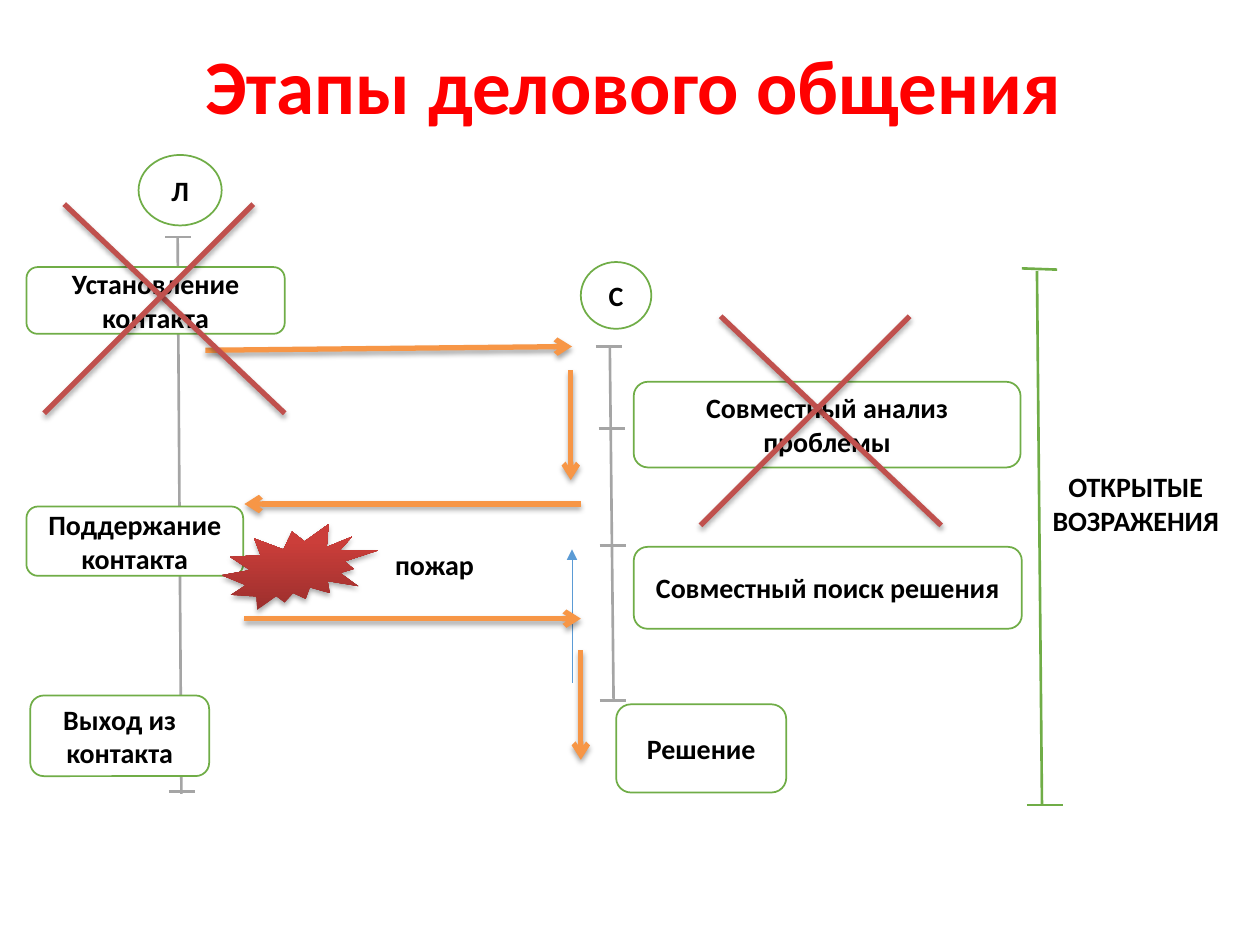
import dataclasses
import typing

import pptx
import pptx.dml.color
import pptx.enum.shapes
import pptx.enum.text
import pptx.oxml.ns
import pptx.util
from lxml import etree

Inches = pptx.util.Inches
Pt = pptx.util.Pt
Kind = pptx.enum.shapes.MSO_SHAPE
Align = pptx.enum.text.PP_ALIGN
qn = pptx.oxml.ns.qn

GREEN, GREY, ORANGE, RED, BLUE = "70AD47", "A5A5A5", "F79646", "C0504D", "5B9BD5"


@dataclasses.dataclass
class Line:
    x1: float
    y1: float
    x2: float
    y2: float
    color: str
    width: float = 1.5
    head: str = ""
    shadow: bool = False


@dataclasses.dataclass
class Stage:
    words: list[str]
    left: float
    top: float
    width: float
    height: float
    outline: str = GREEN
    kind: typing.Any = Kind.ROUNDED_RECTANGLE
    align: typing.Any = Align.CENTER


def rgb(value: str) -> pptx.dml.color.RGBColor:
    return pptx.dml.color.RGBColor.from_string(value)


def cast_shadow(effects) -> None:
    shadow = etree.SubElement(
        effects, qn("a:outerShdw"), blurRad=str(Pt(3.1)), dist=str(Pt(1.8)),
        dir="5400000", rotWithShape="0")
    black = etree.SubElement(shadow, qn("a:srgbClr"), val="000000")
    etree.SubElement(black, qn("a:alpha"), val="35000")


def draw_line(shapes, line: Line) -> None:
    connector = shapes.add_connector(
        pptx.enum.shapes.MSO_CONNECTOR.STRAIGHT,
        Inches(line.x1), Inches(line.y1), Inches(line.x2), Inches(line.y2))
    connector.line.color.rgb = rgb(line.color)
    connector.line.width = Pt(line.width)
    properties = connector._element.spPr
    if line.head:
        etree.SubElement(properties.find(qn("a:ln")), qn("a:tailEnd"), type=line.head)
    effects = etree.SubElement(properties, qn("a:effectLst"))
    if line.shadow:
        cast_shadow(effects)


def write(frame, words: list[str], sizes: list[float], color: str, align) -> None:
    frame.word_wrap = True
    frame.vertical_anchor = pptx.enum.text.MSO_ANCHOR.MIDDLE
    paragraph = frame.paragraphs[0]
    paragraph.alignment = align
    for word, size in zip(words, sizes):
        run = paragraph.add_run()
        run.text = word
        run.font.name = "Calibri"
        run.font.size = Pt(size)
        run.font.bold = True
        run.font.color.rgb = rgb(color)


def draw_stage(shapes, stage: Stage) -> None:
    box = shapes.add_shape(stage.kind, Inches(stage.left), Inches(stage.top),
                           Inches(stage.width), Inches(stage.height))
    box.shadow.inherit = False
    box.fill.solid()
    box.fill.fore_color.rgb = rgb("FFFFFF")
    if stage.outline:
        box.line.color.rgb = rgb(stage.outline)
        box.line.width = Pt(1)
    else:
        box.line.fill.background()
    write(box.text_frame, stage.words, [16, 11, 16], "000000", stage.align)


def draw_fire(shapes) -> None:
    fire = shapes.add_shape(Kind.EXPLOSION2, Inches(1.76), Inches(4.16),
                            Inches(1.24), Inches(0.68))
    fire.line.fill.background()
    fire.fill.gradient()
    fire.fill.gradient_angle = 90
    for stop, position, color in zip(fire.fill.gradient_stops, (0, 0.8), ("9C2F2D", "CB3E3A")):
        stop.position = position
        stop.color.rgb = rgb(color)
    fire.shadow.inherit = False
    cast_shadow(fire._element.spPr.find(qn("a:effectLst")))


def draw_cross(shapes, left: float, top: float) -> None:
    bottom = top + 1.66
    for start, end in ((0.16, 1.91), (1.66, 0)):
        draw_line(shapes, Line(left + start, top, left + end, bottom, RED, 3, shadow=True))


def tick(left: float, y: float) -> Line:
    return Line(left, y, left + 0.21, y, GREY)


def arrow(x1: float, y1: float, x2: float, y2: float) -> Line:
    return Line(x1, y1, x2, y2, ORANGE, 3, "arrow", True)


TIMELINES = [
    Line(1.41, 1.88, 1.44, 6.3, GREY), tick(1.31, 1.88), tick(1.34, 6.28),
    Line(4.84, 2.75, 4.87, 5.55, GREY),
    tick(4.73, 2.75), tick(4.75, 3.4), tick(4.76, 4.33), tick(4.76, 5.56),
    Line(4.54, 5.42, 4.54, 4.36, BLUE, 0.5, "triangle"),
]

STAGES = [
    Stage(["Л"], 1.1, 1.23, 0.66, 0.56, kind=Kind.OVAL),
    Stage(["С"], 4.61, 2.08, 0.56, 0.53, kind=Kind.OVAL),
    Stage(["Установление контакта"], 0.21, 2.12, 2.05, 0.53),
    Stage(["Поддержание контакта"], 0.21, 4.02, 1.72, 0.55),
    Stage(["Выход из контакта"], 0.24, 5.52, 1.42, 0.64),
    Stage(["пожар"], 3.01, 4.2, 0.99, 0.55, outline="", align=Align.LEFT),
    Stage(["Совместный анализ проблемы"], 5.03, 3.03, 3.07, 0.68),
    Stage(["Совместный поиск решения"], 5.03, 4.34, 3.08, 0.65),
    Stage(["Решение"], 4.89, 5.59, 1.35, 0.7),
    Stage(["ОТКРЫТЫЕ", " ", "ВОЗРАЖЕНИЯ"], 8.15, 1.88, 1.73, 4.23, outline=""),
]

OBJECTIONS_SPAN = [
    Line(8.23, 2.15, 8.27, 6.39, GREEN),
    Line(8.11, 2.13, 8.39, 2.14, GREEN),
    Line(8.15, 6.39, 8.44, 6.39, GREEN),
]

EXCHANGES = [
    arrow(1.63, 2.78, 4.54, 2.75),
    arrow(4.61, 4, 1.94, 4),
    arrow(1.94, 4.91, 4.61, 4.91),
    arrow(4.53, 2.94, 4.53, 3.81),
    arrow(4.61, 5.16, 4.61, 6.03),
]


def main() -> None:
    deck = pptx.Presentation()
    deck.slide_width, deck.slide_height = Inches(10), Inches(7.5)
    shapes = deck.slides.add_slide(deck.slide_layouts[6]).shapes

    title = shapes.add_textbox(Inches(0.53), Inches(0.04), Inches(9), Inches(1.25))
    write(title.text_frame, ["Этапы делового общения"], [44], "FF0000", Align.CENTER)

    for line in TIMELINES:
        draw_line(shapes, line)
    for stage in STAGES:
        draw_stage(shapes, stage)
    for line in OBJECTIONS_SPAN + EXCHANGES:
        draw_line(shapes, line)
    draw_fire(shapes)
    draw_cross(shapes, 0.35, 1.62)
    draw_cross(shapes, 5.56, 2.51)

    deck.save("out.pptx")


if __name__ == "__main__":
    main()
